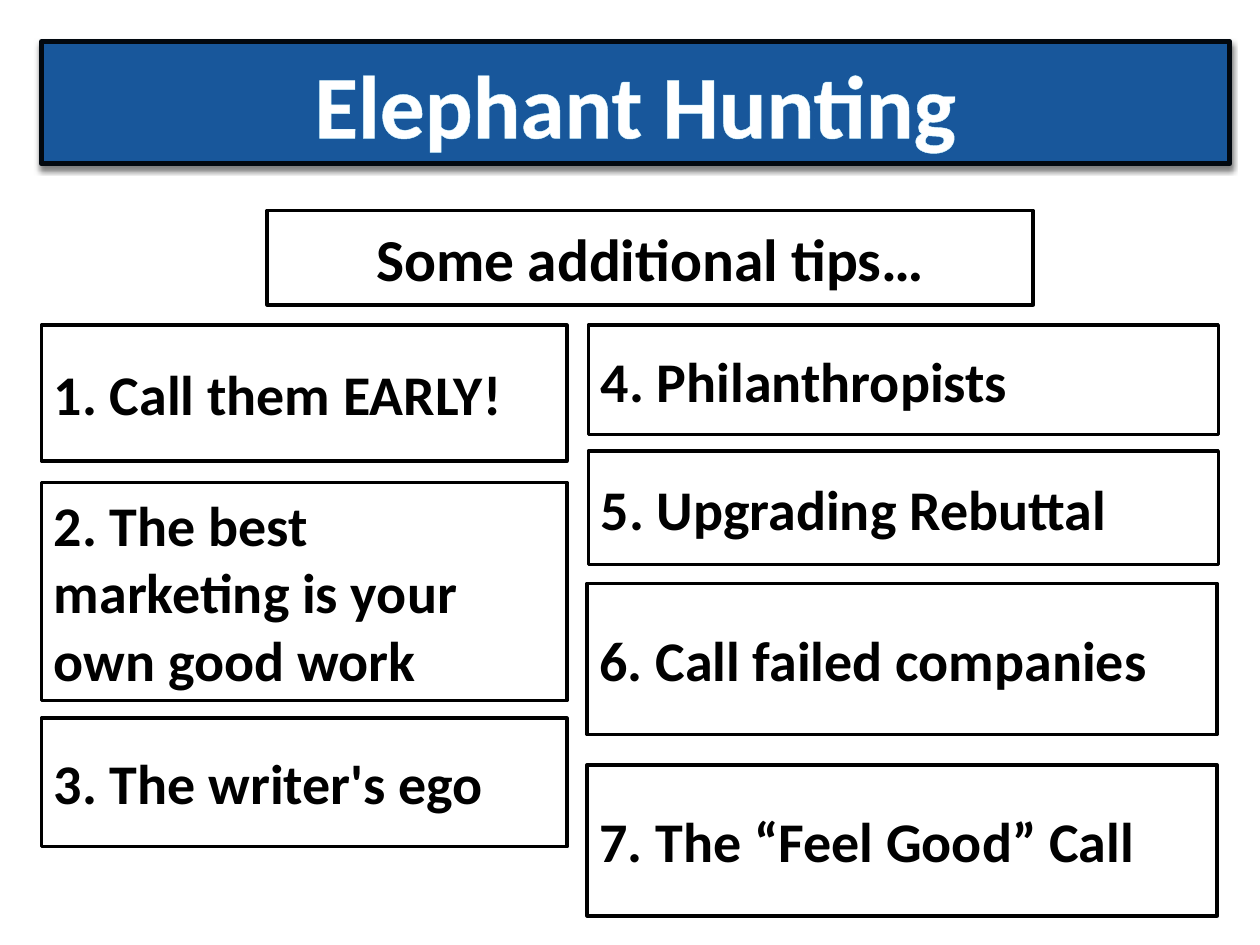
from dataclasses import dataclass

from lxml import etree
from pptx import Presentation
from pptx.dml.color import RGBColor
from pptx.enum import shapes, text
from pptx.oxml import ns
from pptx.util import Inches, Pt


@dataclass(frozen=True)
class Theme:
    font: str = "Calibri"
    banner: str = "18579B"
    banner_line: str = "02080F"
    glow: str = "CCF2FD"
    white: str = "FFFFFF"
    black: str = "000000"
    title_size: int = 51
    heading_size: int = 34
    tip_size: int = 32


def add_solid_fill(parent, color, alpha=None):
    fill = etree.SubElement(parent, ns.qn("a:solidFill")) if alpha is None else parent
    clr = etree.SubElement(fill, ns.qn("a:srgbClr"), val=color)
    if alpha is not None:
        etree.SubElement(clr, ns.qn("a:alpha"), val=str(alpha * 1000))


class TipSlide:
    def __init__(self, prs, theme):
        self.theme = theme
        self.s = prs.slides.add_slide(prs.slide_layouts[5])

    def style(self, sp, words, size, color, fill, line, width, align):
        sp.fill.solid()
        sp.fill.fore_color.rgb = RGBColor.from_string(fill)
        sp.line.color.rgb = RGBColor.from_string(line)
        sp.line.width = Pt(width)
        sp.shadow.inherit = False
        tf = sp.text_frame
        tf.word_wrap = True
        tf.auto_size = text.MSO_AUTO_SIZE.NONE
        tf.vertical_anchor = text.MSO_ANCHOR.MIDDLE
        p = tf.paragraphs[0]
        p.alignment = align
        r = p.add_run()
        r.text = words
        p.font.name = self.theme.font
        p.font.size = Pt(size)
        p.font.bold = True
        p.font.color.rgb = RGBColor.from_string(color)
        return r

    def title(self, words, x, y, w, h):
        t = self.theme
        sp = self.s.shapes.title
        sp.left, sp.top, sp.width, sp.height = map(Inches, (x, y, w, h))
        r = self.style(sp, words, t.title_size, t.white, t.banner,
                       t.banner_line, 3, text.PP_ALIGN.CENTER)
        effects = sp._element.spPr.find(ns.qn("a:effectLst"))
        shadow = etree.SubElement(effects, ns.qn("a:outerShdw"), blurRad=str(Pt(3)),
                                  dist=str(Pt(2)), dir="5400000", rotWithShape="0")
        add_solid_fill(shadow, t.black, alpha=50)
        outline = etree.Element(ns.qn("a:ln"), w=str(Pt(1)))
        add_solid_fill(outline, t.glow)
        r._r.get_or_add_rPr().insert(0, outline)

    def box(self, words, x, y, w, h, size, align=text.PP_ALIGN.LEFT):
        t = self.theme
        sp = self.s.shapes.add_shape(shapes.MSO_SHAPE.RECTANGLE,
                                     *map(Inches, (x, y, w, h)))
        self.style(sp, words, size, t.black, t.white, t.black, 2, align)

    def tips(self, w, rows):
        """Draw one column of boxes; each row is (text, left, top, height)."""
        for words, x, y, h in rows:
            self.box(words, x, y, w, h, self.theme.tip_size)


def main():
    prs = Presentation()
    prs.slide_width, prs.slide_height = Inches(10), Inches(7.5)
    theme = Theme()
    slide = TipSlide(prs, theme)
    slide.title("Elephant Hunting", 0.33, 0.33, 9.43, 0.97)
    slide.box("Some additional tips…", 2.12, 1.67, 6.08, 0.75,
              theme.heading_size, text.PP_ALIGN.CENTER)
    slide.tips(4.17, [
        ("1. Call them EARLY!", 0.33, 2.58, 1.08),
        ("2. The best marketing is your own good work", 0.33, 3.83, 1.73),
        ("3. The writer's ego", 0.33, 5.7, 1.02),
    ])
    slide.tips(5, [
        ("4. Philanthropists", 4.67, 2.58, 0.87),
        ("5. Upgrading Rebuttal", 4.67, 3.58, 0.9),
        ("6. Call failed companies", 4.66, 4.63, 1.2),
        ("7. The “Feel Good” Call", 4.66, 6.07, 1.2),
    ])
    prs.save("out.pptx")


if __name__ == "__main__":
    main()
